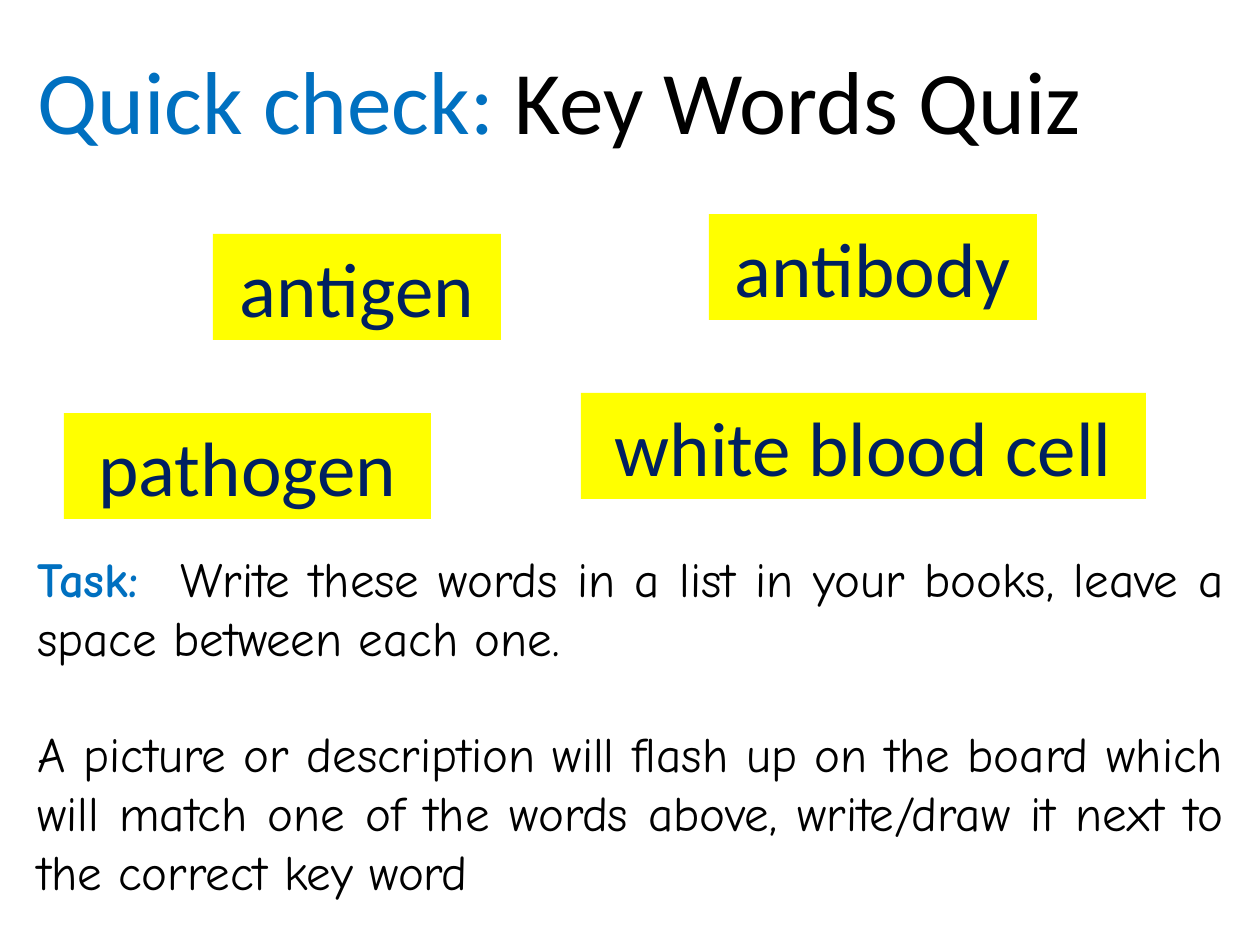
from pptx import Presentation
from pptx.dml.color import RGBColor
from pptx.enum.shapes import MSO_SHAPE
from pptx.enum.text import MSO_ANCHOR, PP_ALIGN
from pptx.util import Emu, Pt

RECT = MSO_SHAPE.RECTANGLE
TOP, MIDDLE = MSO_ANCHOR.TOP, MSO_ANCHOR.MIDDLE
LEFT, CENTER, JUSTIFY = PP_ALIGN.LEFT, PP_ALIGN.CENTER, PP_ALIGN.JUSTIFY

BLUE = RGBColor(0x00, 0x70, 0xC0)
NAVY = RGBColor(0x00, 0x20, 0x60)
BLACK = RGBColor(0x00, 0x00, 0x00)
YELLOW = RGBColor(0xFF, 0xFF, 0x00)

# Content: paragraphs are lists of (text, colour, bold)
TITLE = [[("Quick check: ", BLUE, False), ("Key Words Quiz", BLACK, False)]]
TASK = [
    [("Task:  ", BLUE, True),
     ("Write these words in a list in your books, leave a space between each one.",
      BLACK, False)],
    [("A picture or description will flash up on the board which will match one "
      "of the words above, write/draw it next to the correct key word",
      BLACK, False)],
]
# Key word, left, top, width
KEY_WORDS = [
    ("antigen", 213, 234, 288),
    ("antibody", 709, 214, 328),
    ("white blood cell", 581, 393, 565),
    ("pathogen", 64, 413, 367),
]
KEY_WORD_HEIGHT = 106
MARGIN = 25


def px(n):
    return Emu(round(n * 914400 / 126))


def write(s, paragraphs, font, size, align, anchor=TOP, gap=0):
    tf = s.text_frame
    tf.word_wrap = True
    tf.vertical_anchor = anchor
    for i, runs in enumerate(paragraphs):
        p = tf.add_paragraph() if i else tf.paragraphs[0]
        p.alignment = align
        p.font.name = font
        p.font.size = Pt(size)
        if i:
            p.space_before = Pt(gap)
        for text, color, bold in runs:
            r = p.add_run()
            r.text = text
            r.font.color.rgb = color
            r.font.bold = bold


prs = Presentation()
prs.slide_width, prs.slide_height = px(1260), px(945)
slide = prs.slides.add_slide(prs.slide_layouts[6])

# Title
title = slide.shapes.add_textbox(px(MARGIN), px(23), px(1152), px(151))
write(title, TITLE, "Calibri", 51, LEFT, MIDDLE)

# Key word cards
for word, left, top, width in KEY_WORDS:
    card = slide.shapes.add_shape(RECT, px(left), px(top), px(width), px(KEY_WORD_HEIGHT))
    card.shadow.inherit = False
    card.fill.solid()
    card.fill.fore_color.rgb = YELLOW
    card.line.fill.background()
    write(card, [[(word, NAVY, False)]], "Calibri", 44, CENTER)

# Task instructions
task = slide.shapes.add_textbox(px(MARGIN), px(542), px(1211), px(369))
write(task, TASK, "Comic Neue", 28, JUSTIFY, gap=33)

prs.save("out.pptx")
